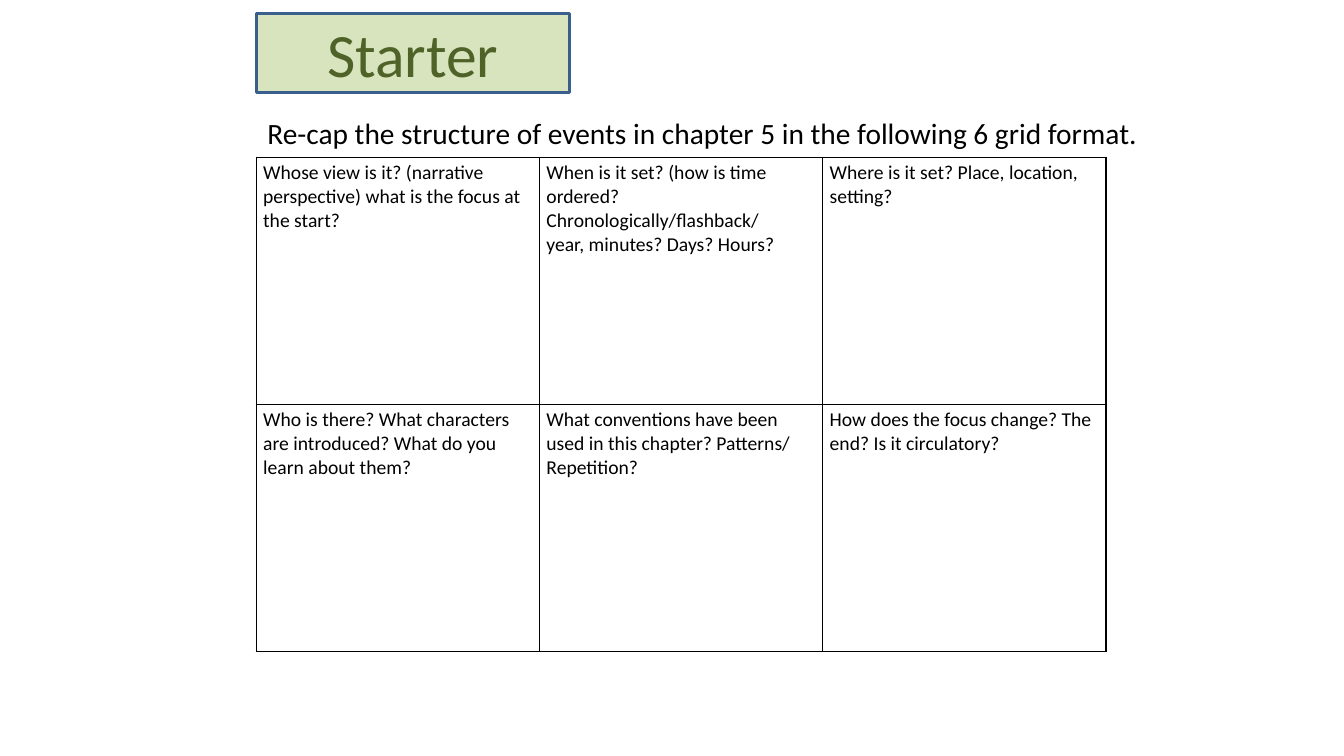
from lxml.etree import SubElement
from pptx import Presentation
from pptx.dml.color import RGBColor
from pptx.enum.shapes import MSO_SHAPE
from pptx.enum.text import MSO_ANCHOR, PP_ALIGN
from pptx.oxml.ns import qn
from pptx.util import Inches, Pt

COLORS = {"text": "000000", "badge": "D7E4BD", "badge_line": "3A5F8C",
          "badge_text": "4F6228", "grid": "000000"}
FONT = "Calibri"
LEFT = 2.54
GRID_TOP = 1.56
COLUMN_WIDTH, ROW_HEIGHT = 2.81, 2.45

# Each cell is a list of paragraphs.
QUESTIONS = [
    [["Whose view is it? (narrative perspective) what is the focus at the start?"],
     ["When is it set? (how is time ordered? Chronologically/flashback/",
      "year, minutes? Days? Hours?"],
     ["Where is it set? Place, location, setting?"]],
    [["Who is there? What characters are introduced? What do you learn about them?"],
     ["What conventions have been used in this chapter? Patterns/ Repetition?"],
     ["How does the focus change? The end? Is it circulatory?"]],
]


def color(name):
    return RGBColor.from_string(COLORS[name])


def write(text_frame, lines, size, color_name, alignment=PP_ALIGN.LEFT):
    text_frame.word_wrap = True
    for index, line in enumerate(lines):
        paragraph = text_frame.add_paragraph() if index else text_frame.paragraphs[0]
        paragraph.alignment = alignment
        run = paragraph.add_run()
        run.text = line
        run.font.name = FONT
        run.font.size = Pt(size)
        run.font.color.rgb = color(color_name)


def add_badge(slide, text):
    shape = slide.shapes.add_shape(MSO_SHAPE.RECTANGLE, Inches(LEFT), Inches(0.13),
                                   Inches(3.11), Inches(0.79))
    shape.shadow.inherit = False
    shape.fill.solid()
    shape.fill.fore_color.rgb = color("badge")
    shape.line.color.rgb = color("badge_line")
    shape.line.width = Pt(2)
    shape.text_frame.vertical_anchor = MSO_ANCHOR.MIDDLE
    write(shape.text_frame, [text], 44, "badge_text", PP_ALIGN.CENTER)


def add_heading(slide, text):
    shape = slide.shapes.add_textbox(Inches(LEFT), Inches(1.07), Inches(8.85), Inches(0.49))
    text_frame = shape.text_frame
    text_frame.margin_left = text_frame.margin_right = Inches(0.05)
    text_frame.vertical_anchor = MSO_ANCHOR.MIDDLE
    write(text_frame, [text], 21, "text", PP_ALIGN.CENTER)


def draw_borders(cell):
    properties = cell._tc.get_or_add_tcPr()
    for side in ("a:lnL", "a:lnR", "a:lnT", "a:lnB"):
        line = SubElement(properties, qn(side), w=str(Pt(1)))
        fill = SubElement(line, qn("a:solidFill"))
        SubElement(fill, qn("a:srgbClr"), val=COLORS["grid"])


def add_question_grid(slide, rows):
    row_count, column_count = len(rows), len(rows[0])
    table = slide.shapes.add_table(
        row_count, column_count, Inches(LEFT), Inches(GRID_TOP),
        Inches(COLUMN_WIDTH * column_count), Inches(ROW_HEIGHT * row_count)).table
    table.first_row = table.horz_banding = False
    for row_index, row in enumerate(rows):
        for column_index, lines in enumerate(row):
            cell = table.cell(row_index, column_index)
            cell.margin_left = cell.margin_right = Inches(0.07)
            cell.margin_top = cell.margin_bottom = Inches(0.04)
            draw_borders(cell)
            cell.fill.background()
            write(cell.text_frame, lines, 14, "text")


def main():
    presentation = Presentation()
    presentation.slide_width = Inches(13.33)
    presentation.slide_height = Inches(7.5)
    slide = presentation.slides.add_slide(presentation.slide_layouts[6])
    add_heading(slide, "Re-cap the structure of events in chapter 5 in the following 6 grid format.")
    add_question_grid(slide, QUESTIONS)
    add_badge(slide, "Starter")
    presentation.save("out.pptx")


if __name__ == "__main__":
    main()
